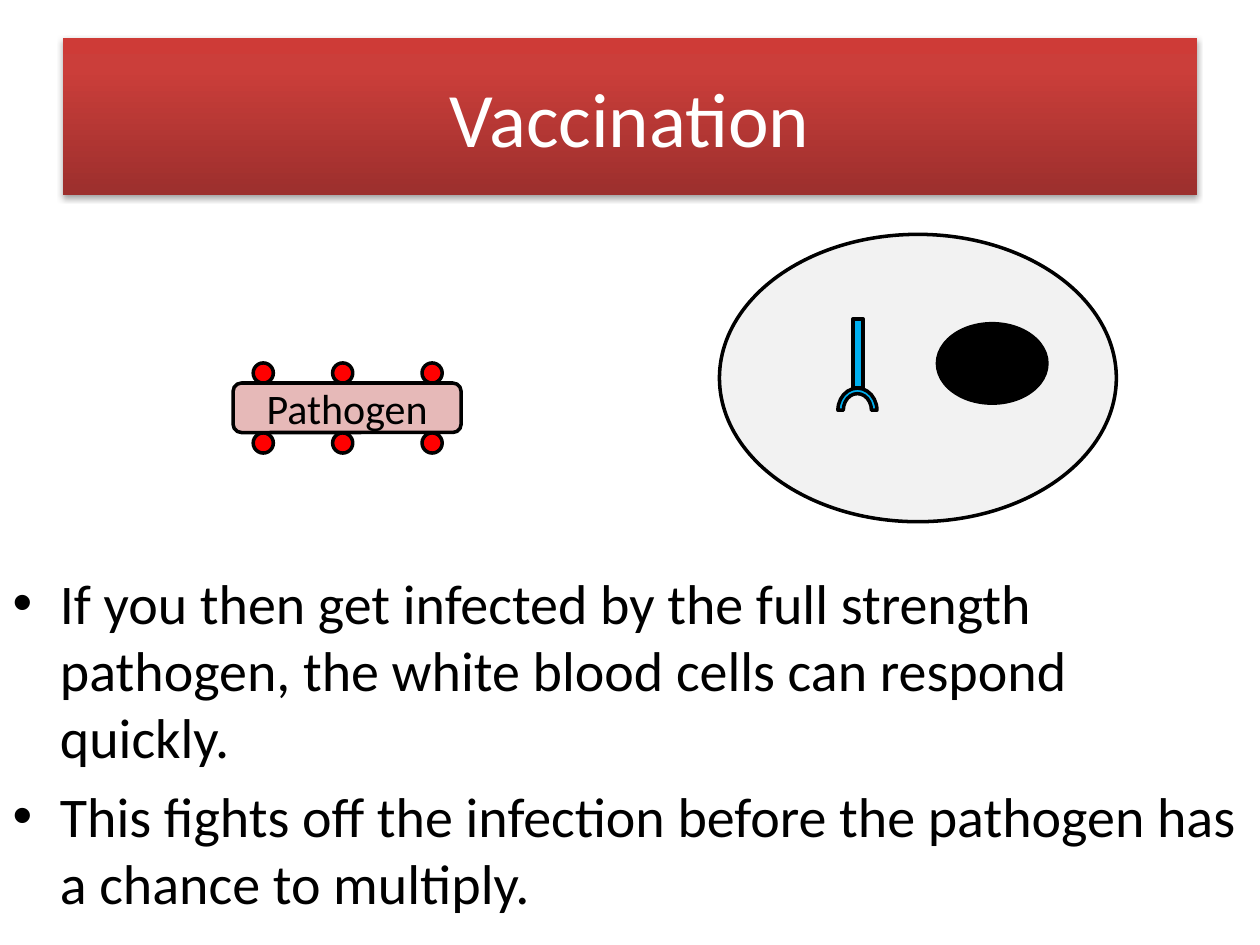
from itertools import product

from lxml import etree
from pptx import Presentation
from pptx.dml.color import RGBColor
from pptx.enum.shapes import MSO_SHAPE
from pptx.enum.text import MSO_ANCHOR, MSO_AUTO_SIZE, PP_ALIGN
from pptx.oxml import parse_xml
from pptx.oxml.ns import nsdecls
from pptx.util import Pt

OVAL = MSO_SHAPE.OVAL
ARC = MSO_SHAPE.BLOCK_ARC
RECT = MSO_SHAPE.RECTANGLE
ROUND = MSO_SHAPE.ROUNDED_RECTANGLE
MIDDLE = MSO_ANCHOR.MIDDLE
TOP = MSO_ANCHOR.TOP
CENTER = PP_ALIGN.CENTER
LEFT = PP_ALIGN.LEFT
NO_FIT = MSO_AUTO_SIZE.NONE

BLACK = RGBColor(0x00, 0x00, 0x00)
WHITE = RGBColor(0xFF, 0xFF, 0xFF)
GREY = RGBColor(0xF2, 0xF2, 0xF2)
BLUE = RGBColor(0x00, 0xB0, 0xF0)
RED = RGBColor(0xFF, 0x00, 0x00)
PINK = RGBColor(0xE6, 0xB9, 0xB8)
DARK = RGBColor(0x9C, 0x2F, 0x2D)
MID = RGBColor(0xCB, 0x3E, 0x3A)
LIGHT = RGBColor(0xCE, 0x3B, 0x37)

FONT = "Calibri"
POINTS = [
    "If you then get infected by the full strength pathogen, "
    "the white blood cells can respond quickly.",
    "This fights off the infection before the pathogen has a chance to multiply.",
]


def place(shape, left, top, width, height):
    shape.left, shape.top = Pt(left), Pt(top)
    shape.width, shape.height = Pt(width), Pt(height)


def write(shape, *lines, size, color=BLACK, align=LEFT, anchor=TOP):
    frame = shape.text_frame
    frame.text = "\n".join(lines)
    frame.auto_size = NO_FIT
    frame.word_wrap = True
    frame.vertical_anchor = anchor
    for para in frame.paragraphs:
        para.alignment = align
        for run in para.runs:
            run.font.name = FONT
            run.font.size = Pt(size)
            run.font.color.rgb = color


def draw(slide, kind, left, top, width, height, fill):
    shape = slide.shapes.add_shape(kind, Pt(left), Pt(top), Pt(width), Pt(height))
    shape.shadow.inherit = False
    shape.fill.solid()
    shape.fill.fore_color.rgb = fill
    shape.line.color.rgb = BLACK
    shape.line.width = Pt(2)
    return shape


def shade(shape, stops):
    grad = parse_xml(
        f'<a:gradFill {nsdecls("a")} rotWithShape="1"><a:gsLst/>'
        '<a:lin ang="16200000" scaled="0"/></a:gradFill>'
    )
    for spot, color in stops:
        stop = etree.SubElement(grad[0], grad[0].tag.replace("gsLst", "gs"))
        stop.set("pos", str(spot * 1000))
        stop.append(parse_xml(f'<a:srgbClr {nsdecls("a")} val="{color}"/>'))
    glow = parse_xml(
        f'<a:effectLst {nsdecls("a")}><a:outerShdw blurRad="{Pt(3.1)}" '
        f'dist="{Pt(1.8)}" dir="5400000" rotWithShape="0"><a:srgbClr val="{BLACK}">'
        '<a:alpha val="35000"/></a:srgbClr></a:outerShdw></a:effectLst>'
    )
    shape.element.spPr.extend([grad, glow])


def add_text(slide):
    title, body = slide.shapes.title, slide.placeholders[1]
    place(title, 36, 21.6, 648, 90)
    shade(title, [(0, DARK), (80, MID), (100, LIGHT)])
    write(title, "Vaccination", size=44, color=WHITE, align=CENTER, anchor=MIDDLE)
    place(body, 0, 321.1, 720, 218.9)
    write(body, *POINTS, size=32)


def add_cell(slide):
    draw(slide, OVAL, 411.1, 133.9, 226.8, 164.2, GREY)
    arc = draw(slide, ARC, 478.8, 221.8, 22.3, 25.2, BLUE)
    for index, value in enumerate((108, 0, 0.14)):
        arc.adjustments[index] = value
    draw(slide, RECT, 487.4, 182.2, 5.8, 39.6, BLUE)
    draw(slide, OVAL, 535.7, 185, 62.6, 45.4, BLACK)


def add_germ(slide):
    for top, left in product((207.4, 247.4), (144.7, 190.1, 241.2)):
        draw(slide, OVAL, left, top, 11.5, 11.5, RED)
    germ = draw(slide, ROUND, 133.2, 218.9, 130.3, 28.3, PINK)
    write(germ, "Pathogen", size=24, align=CENTER, anchor=MIDDLE)


def main():
    deck = Presentation()
    deck.slide_width, deck.slide_height = Pt(720), Pt(540)
    slide = deck.slides.add_slide(deck.slide_layouts[1])
    add_text(slide)
    add_cell(slide)
    add_germ(slide)
    deck.save("out.pptx")


if __name__ == "__main__":
    main()
